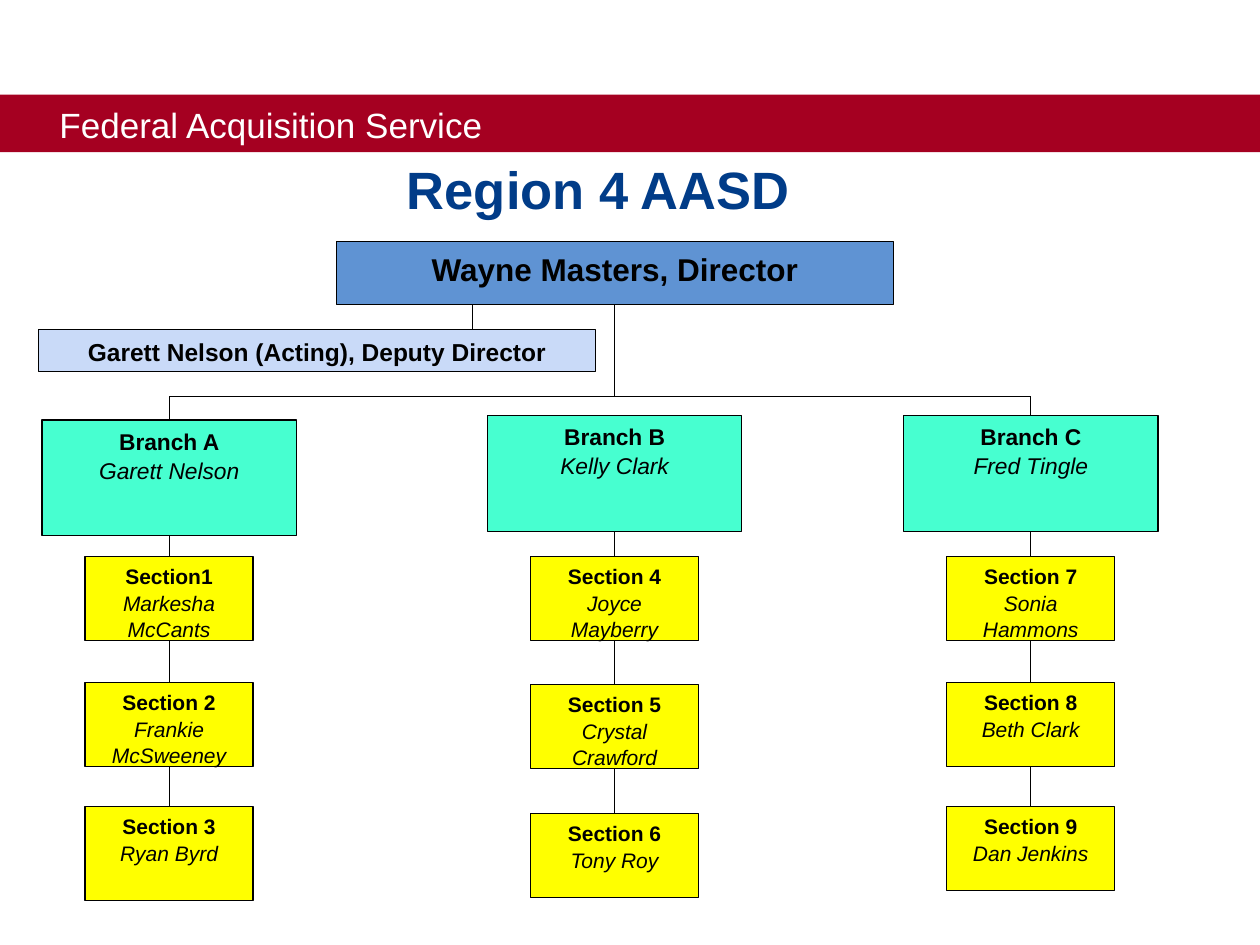
from lxml import etree
from pptx import Presentation
from pptx.dml.color import RGBColor
from pptx.enum.shapes import MSO_CONNECTOR, MSO_SHAPE
from pptx.enum.text import MSO_ANCHOR, PP_ALIGN
from pptx.oxml.ns import qn
from pptx.util import Cm, Pt

RECT = MSO_SHAPE.RECTANGLE
LINE = MSO_CONNECTOR.STRAIGHT
TOP, MIDDLE = MSO_ANCHOR.TOP, MSO_ANCHOR.MIDDLE
LEFT, CENTER = PP_ALIGN.LEFT, PP_ALIGN.CENTER

COLORS = {
    "banner": "A50021", "title": "013C88", "lead": "5F93D3", "deputy": "C9DAF8",
    "branch": "47FFD0", "section": "FFFF00", "black": "000000", "white": "FFFFFF",
}
BANNER = "Federal Acquisition Service"
TITLE = "Region 4 AASD"
LEAD = "Wayne Masters, Director"
DEPUTY = "Garett Nelson (Acting), Deputy Director"

# Each branch: center x, top, name, head, sections (top, height, name, head); in cm
BRANCHES = [
    (3.41, 8.47, "Branch A", "Garett Nelson", [
        (11.22, 1.69, "Section1", "Markesha McCants"),
        (13.76, 1.69, "Section 2", "Frankie McSweeney"),
        (16.26, 1.9, "Section 3", "Ryan Byrd")]),
    (12.39, 8.38, "Branch B", "Kelly Clark", [
        (11.22, 1.69, "Section 4", "Joyce Mayberry"),
        (13.8, 1.69, "Section 5", "Crystal Crawford"),
        (16.4, 1.69, "Section 6", "Tony Roy")]),
    (20.78, 8.38, "Branch C", "Fred Tingle", [
        (11.22, 1.69, "Section 7", "Sonia Hammons"),
        (13.76, 1.69, "Section 8", "Beth Clark"),
        (16.26, 1.69, "Section 9", "Dan Jenkins")]),
]
LEAD_BOX = (6.78, 4.87, 11.23, 1.27)
DEPUTY_BOX = (0.78, 6.65, 11.23, 0.84)
BRANCH_W, BRANCH_H, SECTION_W = 5.13, 2.33, 3.39
BUS_Y, DEPUTY_X = 8, 9.52


def color(name):
    return RGBColor.from_string(COLORS[name])


def write(shape, lines, size, ink="black", align=CENTER, anchor=TOP):
    """Fill a shape with lines of (text, bold, italic)."""
    frame = shape.text_frame
    frame.word_wrap = True
    frame.vertical_anchor = anchor
    for i, (text, bold, italic) in enumerate(lines):
        para = frame.add_paragraph() if i else frame.paragraphs[0]
        para.text = text
        para.alignment = align
        para.line_spacing = 1.05
        font = para.font
        font.name, font.size = "Arial", Pt(size)
        font.bold, font.italic = bold, italic
        font.color.rgb = color(ink)


def add_box(slide, place, fill, edge=True):
    box = slide.shapes.add_shape(RECT, *map(Cm, place))
    box.shadow.inherit = False
    box.fill.solid()
    box.fill.fore_color.rgb = color(fill)
    if edge:
        box.line.color.rgb = color("black")
        box.line.width = Pt(0.75)
    else:
        box.line.fill.background()
    return box


def add_unit(slide, mid, top, width, height, fill, name, head, size):
    box = add_box(slide, (mid - width / 2, top, width, height), fill)
    write(box, [(name, True, False), (head, False, True)], size)


def add_line(slide, x1, y1, x2, y2):
    line = slide.shapes.add_connector(LINE, *map(Cm, (x1, y1, x2, y2)))
    line.line.color.rgb = color("black")
    line.line.width = Pt(0.75)
    etree.SubElement(line._element.spPr, qn("a:effectLst"))


def main():
    deck = Presentation()
    deck.slide_width, deck.slide_height = Cm(25.4), Cm(19.05)
    slide = deck.slides.add_slide(deck.slide_layouts[6])

    banner = add_box(slide, (0, 1.91, 25.4, 1.16), "banner", edge=False)
    banner.text_frame.margin_left = Cm(1.2)
    write(banner, [(BANNER, False, False)], 20, "white", LEFT, MIDDLE)
    title = slide.shapes.add_textbox(Cm(1.27), Cm(2.97), Cm(21.59), Cm(2.67))
    write(title, [(TITLE, True, False)], 30, "title")
    write(add_box(slide, LEAD_BOX, "lead"), [(LEAD, True, False)], 18)
    write(add_box(slide, DEPUTY_BOX, "deputy"), [(DEPUTY, True, False)], 14)

    lead_end = LEAD_BOX[1] + LEAD_BOX[3]
    mids = [branch[0] for branch in BRANCHES]
    add_line(slide, mids[1], lead_end, mids[1], BUS_Y)
    add_line(slide, DEPUTY_X, lead_end, DEPUTY_X, DEPUTY_BOX[1])
    add_line(slide, mids[0], BUS_Y, mids[-1], BUS_Y)
    for mid in (mids[0], mids[-1]):
        add_line(slide, mid, BUS_Y, mid, BRANCHES[mids.index(mid)][1])

    for mid, top, name, head, sections in BRANCHES:
        add_unit(slide, mid, top, BRANCH_W, BRANCH_H, "branch", name, head, 13)
        end = top + BRANCH_H
        for top, height, name, head in sections:
            add_line(slide, mid, end, mid, top)
            add_unit(slide, mid, top, SECTION_W, height, "section", name, head, 12)
            end = top + height

    deck.save("out.pptx")


if __name__ == "__main__":
    main()
